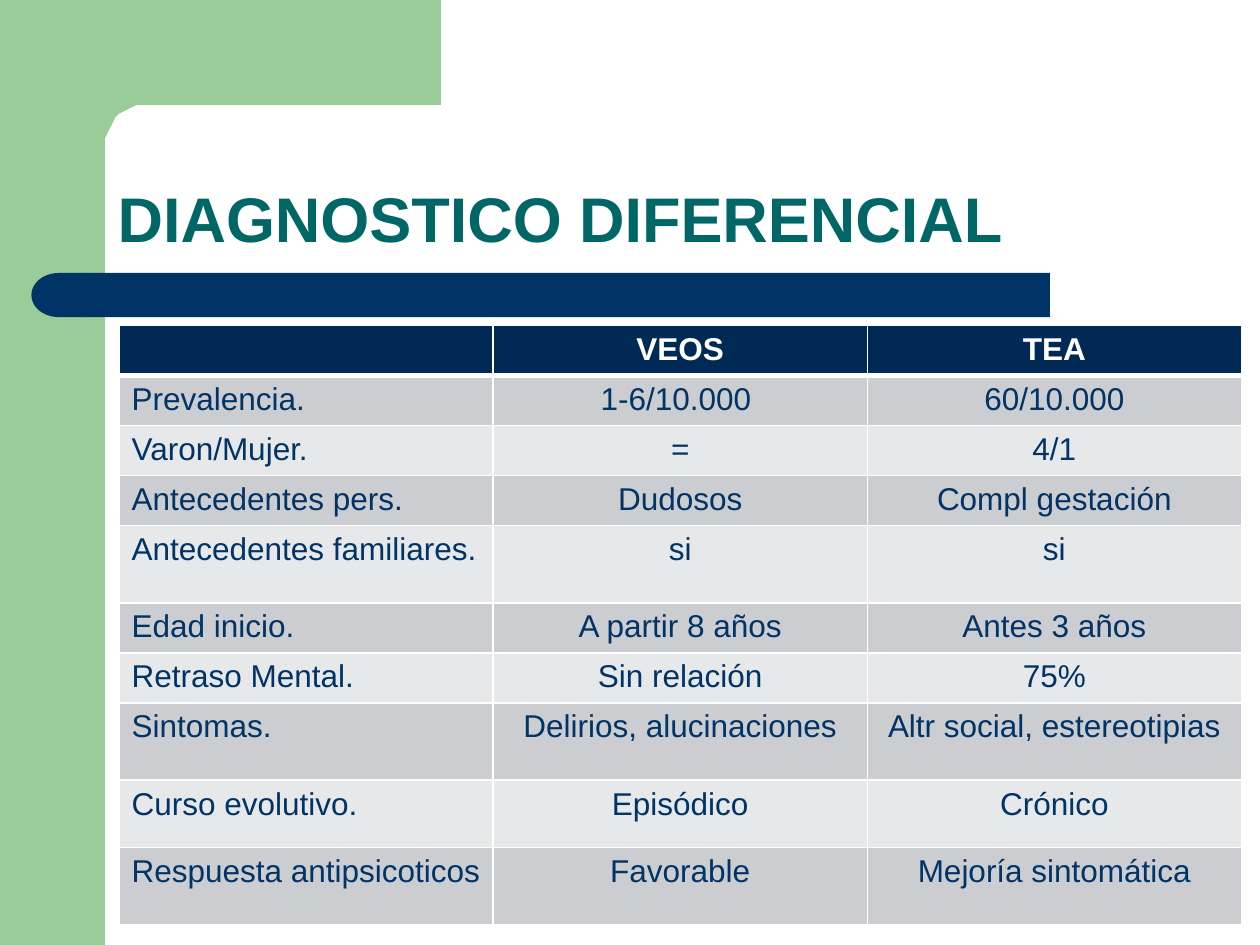
import math
from typing import NamedTuple

import pptx
import pptx.util
import pptx.dml.color
import pptx.enum.shapes
import pptx.enum.text
import pptx.oxml
import pptx.oxml.ns

Pt = pptx.util.Pt
Kind = pptx.enum.shapes.MSO_SHAPE
Align = pptx.enum.text.PP_ALIGN

COLORS = {
    "green": "99CC99",
    "navy": "003366",
    "teal": "006666",
    "head": "002A56",
    "dark": "CCCDD1",
    "light": "E7E8E9",
    "white": "FFFFFF",
}
FONT = "Arial"


class Block(NamedTuple):
    kind: Kind
    left: float
    top: float
    width: float
    height: float
    color: str
    flip: bool = False


class Row(NamedTuple):
    height: float
    texts: tuple[str, str, str]


BLOCKS = [
    Block(Kind.RECTANGLE, 0, 0, 60, 540, "green"),
    Block(Kind.RECTANGLE, 48, 156, 552, 25.2, "navy"),
    Block(Kind.FLOWCHART_DELAY, 18, 156, 31, 25.2, "navy", True),
]

LOW, TALL = 28.6, 44.2
ROWS = [
    Row(LOW, ("", "VEOS", "TEA")),
    Row(LOW, ("Prevalencia.", "1-6/10.000 ", "60/10.000")),
    Row(LOW, ("Varon/Mujer.", "=", "4/1")),
    Row(LOW, ("Antecedentes pers.", "Dudosos", "Compl gestación")),
    Row(TALL, ("Antecedentes familiares.", "si", "si")),
    Row(LOW, ("Edad inicio.", "A partir 8 años", "Antes 3 años")),
    Row(LOW, ("Retraso Mental.", "Sin relación", "75%")),
    Row(TALL, ("Sintomas.", "Delirios, alucinaciones", "Altr social, estereotipias")),
    Row(38.4, ("Curso evolutivo.", "Episódico", "Crónico")),
    Row(TALL, ("Respuesta antipsicoticos", "Favorable", "Mejoría sintomática")),
]


def tint(name: str) -> pptx.dml.color.RGBColor:
    return pptx.dml.color.RGBColor.from_string(COLORS[name])


def paint(shape, color: str) -> None:
    shape.fill.solid()
    shape.fill.fore_color.rgb = tint(color)
    shape.line.fill.background()
    shape.shadow.inherit = False


def style(para, size: float, color: str, bold: bool, align: Align) -> None:
    para.alignment = align
    font = para.font
    font.name, font.size, font.bold = FONT, Pt(size), bold
    font.color.rgb = tint(color)


def draw_block(slide, block: Block) -> None:
    shape = slide.shapes.add_shape(
        block.kind, Pt(block.left), Pt(block.top), Pt(block.width), Pt(block.height)
    )
    paint(shape, block.color)
    if block.flip:
        shape.element.spPr.xfrm.set("flipH", "1")


def draw_corner(slide) -> None:
    """Draw the top band, which meets the side band in a round inner corner."""
    left, top, wide, high, steps = 60, 60, 22, 24, 16
    turns = [math.pi / 2 * i / steps for i in range(steps + 1)]
    curve = [
        (left + wide * (1 - math.sin(t)), top + high * (1 - math.cos(t)))
        for t in turns
    ]
    points = [(252, top), *curve, (left, 92), (36, 92), (36, 0)]
    build = slide.shapes.build_freeform(252, 0, scale=Pt(1))
    build.add_line_segments(points, close=True)
    paint(build.convert_to_shape(), "green")


def add_edge(cell, side: str, width: float) -> None:
    space = pptx.oxml.ns.nsdecls("a")
    edge = pptx.oxml.parse_xml(
        f'<a:ln{side} {space} w="{Pt(width)}"><a:solidFill>'
        f'<a:srgbClr val="{COLORS["white"]}"/></a:solidFill></a:ln{side}>'
    )
    cell._tc.get_or_add_tcPr().append(edge)


def fill_cell(cell, text: str, row: int, col: int) -> None:
    head = row == 0
    thick = {"T": 3 if row == 1 else 1, "B": 3 if head else 1}
    for side in "LRTB":
        add_edge(cell, side, thick.get(side, 1))
    cell.fill.solid()
    cell.fill.fore_color.rgb = tint("head" if head else ("light", "dark")[row % 2])
    cell.text = text
    align = Align.CENTER if col else Align.LEFT
    style(cell.text_frame.paragraphs[0], 18, "white" if head else "navy", head, align)


def draw_table(slide) -> None:
    count, width = 3, 213.8
    high = sum(row.height for row in ROWS)
    table = slide.shapes.add_table(
        len(ROWS), count, Pt(68), Pt(186), Pt(width * count), Pt(high)
    ).table
    for col in table.columns:
        col.width = Pt(width)
    for r, row in enumerate(ROWS):
        table.rows[r].height = Pt(row.height)
        for c, text in enumerate(row.texts):
            fill_cell(table.cell(r, c), text, r, c)


def draw_title(slide) -> None:
    title = slide.shapes.title
    title.left, title.top, title.width, title.height = Pt(60), Pt(60), Pt(624), Pt(90)
    frame = title.text_frame
    frame.text = "DIAGNOSTICO DIFERENCIAL"
    frame.auto_size = pptx.enum.text.MSO_AUTO_SIZE.NONE
    frame.vertical_anchor = pptx.enum.text.MSO_ANCHOR.BOTTOM
    para = frame.paragraphs[0]
    para.line_spacing = 0.9
    style(para, 36, "teal", True, Align.LEFT)


def main() -> None:
    deck = pptx.Presentation()
    deck.slide_width, deck.slide_height = Pt(720), Pt(540)
    slide = deck.slides.add_slide(deck.slide_layouts[5])
    for block in BLOCKS:
        draw_block(slide, block)
    draw_corner(slide)
    draw_title(slide)
    draw_table(slide)
    deck.save("out.pptx")


if __name__ == "__main__":
    main()
